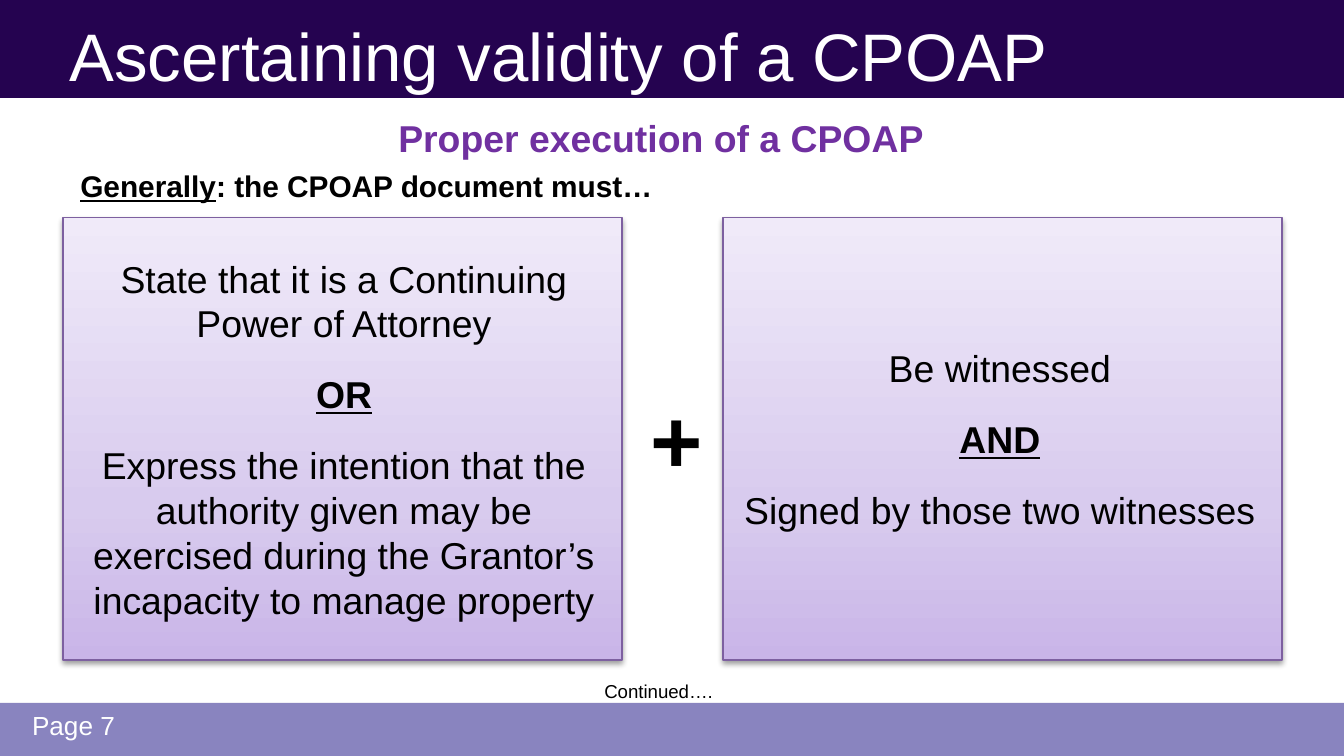
import pptx
import pptx.util
import pptx.dml.color
import pptx.enum.shapes
import pptx.enum.text
import pptx.oxml
import pptx.oxml.ns

WIDE = 10
HIGH = WIDE * 9 / 16
HEAD, FOOT = 0.73, 5.23  # lower edge of the header, upper edge of the footer
TOP, TALL = 1.62, 3.29
CARD, BODY = 4.16, 4.12  # widths of a card and of its text

TITLE = "Ascertaining validity of a CPOAP"
BANDS = [(0, HEAD, "250350"), (FOOT, HIGH - FOOT, "8984BF")]
STOPS = [(0, "C9B5E8"), (35, "D8CBEE"), (100, "F0EAF9")]
STRONG = {"bold": True, "underline": True}

# card left, text left, paragraphs made of (words, format) runs
CARDS = [
    (0.47, 0.5, [
        [("State that it is a Continuing Power of Attorney", {})],
        [("OR", STRONG)],
        [("Express the intention that the authority given may be exercised "
          "during the Grantor’s incapacity to manage property", {})],
    ]),
    (5.38, 5.38, [
        [("Be witnessed", {})],
        [("AND", STRONG)],
        [("Signed by those two witnesses", {})],
    ]),
]

# left, top, width, height, content, format
NOTES = [
    (0.42, 0, 8.83, 0.81, TITLE, {"size": 36, "color": "FFFFFF", "middle": True}),
    (2.42, 0.81, 5, 0.44, "Proper execution of a CPOAP",
     {"size": 20, "color": "7030A0", "bold": True, "center": True}),
    (0.5, 1.2, 5, 0.37,
     [[("Generally", STRONG), (": the CPOAP document must…", {"bold": True})]],
     {"size": 16}),
    (4.74, 2.81, 0.46, 0.91, "+", {"size": 48, "bold": True}),
    (3.96, 5.01, 1.88, 0.27, "Continued….", {"size": 10, "center": True}),
    (0.14, FOOT, 2.33, 0.3, "Page 7", {"size": 14, "color": "FFFFFF"}),
]

deck = pptx.Presentation()
deck.slide_width = pptx.util.Inches(WIDE)
deck.slide_height = pptx.util.Inches(HIGH)
slide = deck.slides.add_slide(deck.slide_layouts[6])


def rgb(code):
    return pptx.dml.color.RGBColor.from_string(code)


def inches(*sizes):
    return [pptx.util.Inches(size) for size in sizes]


def block(left, top, width, height):
    """Add a plain rectangle without a shadow."""
    shape = slide.shapes.add_shape(
        pptx.enum.shapes.MSO_SHAPE.RECTANGLE, *inches(left, top, width, height))
    shape.shadow.inherit = False
    return shape


def band(top, height, color):
    shape = block(0, top, WIDE, height)
    shape.fill.solid()
    shape.fill.fore_color.rgb = rgb(color)
    shape.line.fill.background()


def card(left):
    """Add a panel with a three-stop gradient and a soft shadow."""
    shape = block(left, TOP, CARD, TALL)
    shape.line.color.rgb = rgb("7D60A0")
    shape.line.width = pptx.util.Pt(0.75)
    space = pptx.oxml.ns.nsdecls("a")
    stops = "".join(f'<a:gs pos="{share * 1000}"><a:srgbClr val="{color}"/></a:gs>'
                    for share, color in STOPS)
    props = shape.element.spPr
    props.find(pptx.oxml.ns.qn("a:prstGeom")).addnext(pptx.oxml.parse_xml(
        f'<a:gradFill {space} rotWithShape="1"><a:gsLst>{stops}</a:gsLst>'
        '<a:lin ang="16200000" scaled="0"/></a:gradFill>'))
    props.find(pptx.oxml.ns.qn("a:effectLst")).append(pptx.oxml.parse_xml(
        f'<a:outerShdw {space} blurRad="40000" dist="20000" dir="5400000" '
        'rotWithShape="0"><a:srgbClr val="000000"><a:alpha val="38000"/>'
        '</a:srgbClr></a:outerShdw>'))


def text(left, top, width, height, content, size=20, color="000000", bold=False,
         center=False, middle=False, gap=0):
    """Add a text box; content is a string or a list of paragraphs of runs."""
    frame = slide.shapes.add_textbox(*inches(left, top, width, height)).text_frame
    frame.word_wrap = True
    anchor = pptx.enum.text.MSO_ANCHOR
    frame.vertical_anchor = anchor.MIDDLE if middle else anchor.TOP
    align = pptx.enum.text.PP_ALIGN
    paras = [[(content, {"bold": bold})]] if isinstance(content, str) else content
    for index, runs in enumerate(paras):
        para = frame.add_paragraph() if index else frame.paragraphs[0]
        para.alignment = align.CENTER if center else align.LEFT
        if index:
            para.space_before = pptx.util.Pt(gap)
        for words, style in runs:
            run = para.add_run()
            run.text = words
            run.font.name = "Arial"
            run.font.size = pptx.util.Pt(size)
            run.font.color.rgb = rgb(color)
            run.font.bold = style.get("bold", False)
            run.font.underline = style.get("underline", False)


for strip in BANDS:
    band(*strip)
for left, inner, paras in CARDS:
    card(left)
    text(inner, TOP, BODY, TALL, paras, center=True, middle=True, gap=14)
for *place, content, style in NOTES:
    text(*place, content, **style)

deck.save("out.pptx")
